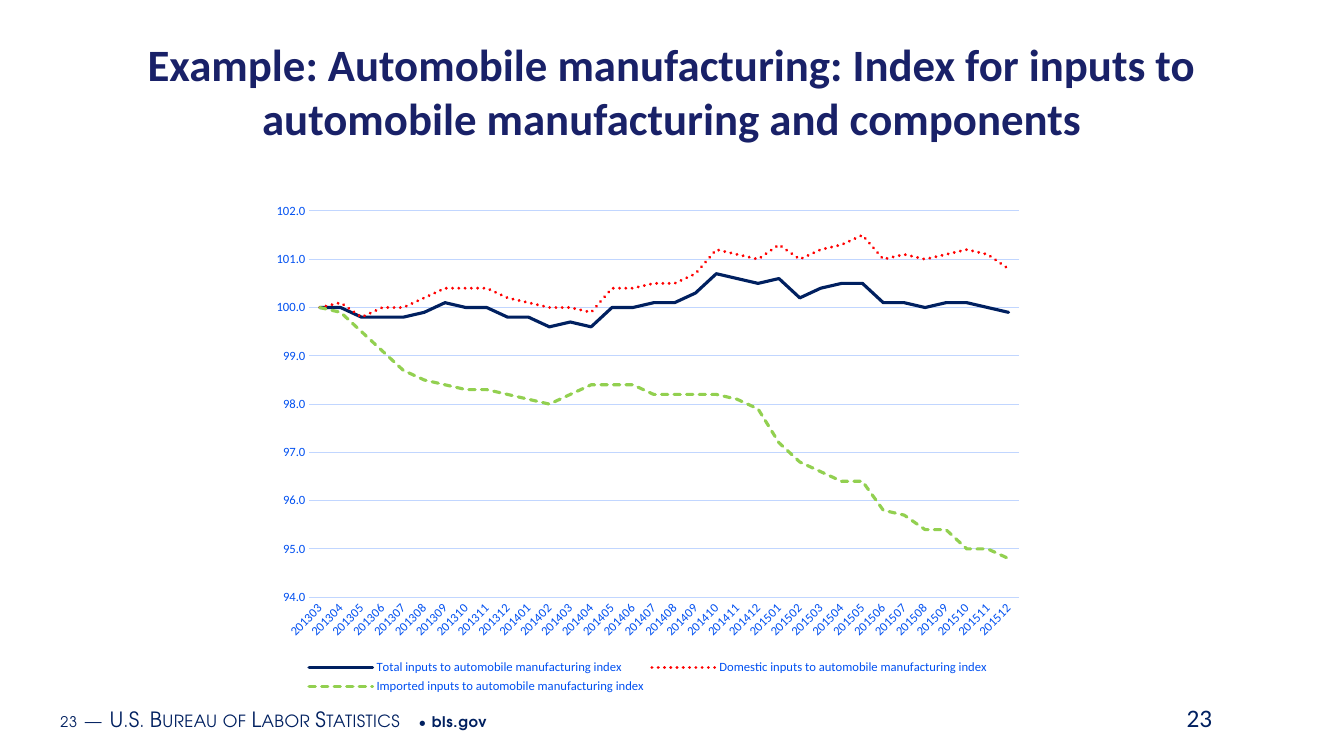
from pptx import Presentation
from pptx.chart.data import CategoryChartData
from pptx.dml.color import RGBColor
from pptx.enum.chart import XL_CHART_TYPE, XL_LEGEND_POSITION, XL_TICK_MARK
from pptx.enum.dml import MSO_LINE
from pptx.enum.text import MSO_ANCHOR, PP_ALIGN
from pptx.util import Pt

PX = 9144  # EMU per px, 100 px to the inch
NAVY = RGBColor(0x00, 0x20, 0x60)
TITLE_BLUE = RGBColor(0x19, 0x21, 0x68)
LABEL_BLUE = RGBColor(0x00, 0x50, 0xF1)
GRID_BLUE = RGBColor(0xC1, 0xD6, 0xFF)
RED = RGBColor(0xFF, 0x00, 0x00)
GREEN = RGBColor(0x92, 0xD0, 0x50)
BODY_FONT = "Calibri"
FOOTER_FONT = "TeX Gyre Adventor"
NO_TICK = XL_TICK_MARK.NONE


def style_font(font, size, color, name=BODY_FONT, bold=False):
    font.size = Pt(size)
    font.color.rgb = color
    font.name = name
    font.bold = bold


def add_box(page, left, top, width, height, anchor):
    box = page.shapes.add_textbox(left * PX, top * PX, width * PX, height * PX)
    box.text_frame.word_wrap = True
    box.text_frame.vertical_anchor = anchor
    return box.text_frame


deck = Presentation()
deck.slide_width, deck.slide_height = 1333 * PX, 750 * PX
page = deck.slides.add_slide(deck.slide_layouts[6])

# Footer: text, size, letter spacing in hundredths of a point, small caps, bold
footer_spans = [
    ("23", 10.5, 50, False, False),
    (" ", 16, 50, False, False),
    ("—", 15, 30, True, False),
    (" ", 16, 50, False, False),
    ("U.S. Bureau of Labor Statistics", 15, 30, True, False),
    (" • ", 10.5, 50, False, False),
    ("bls.gov", 10.5, 50, False, True),
]
footer = add_box(page, 53, 693, 847, 40, MSO_ANCHOR.MIDDLE)
footer.margin_left = footer.margin_right = 7 * PX
footer.margin_top = footer.margin_bottom = 4 * PX
for text, size, spacing, small_caps, bold in footer_spans:
    span = footer.paragraphs[0].add_run()
    span.text = text
    style_font(span.font, size, NAVY, FOOTER_FONT, bold)
    properties = span.font._element
    properties.set("spc", str(spacing))
    if small_caps:
        properties.set("cap", "small")

# Title
title = add_box(page, 54, 30, 1225, 120, MSO_ANCHOR.MIDDLE)
title.text = ("Example: Automobile manufacturing: Index for inputs to "
              "automobile manufacturing and components")
para = title.paragraphs[0]
para.alignment = PP_ALIGN.CENTER
style_font(para.runs[0].font, 32, TITLE_BLUE, bold=True)

# Page number
number = add_box(page, 1167, 692, 100, 40, MSO_ANCHOR.TOP)
number.text = "23"
style_font(number.paragraphs[0].runs[0].font, 18, NAVY)

# Chart data: monthly indexes from March 2013 to December 2015
months = [f"{year}{month:02d}" for year in (2013, 2014, 2015)
          for month in range(3 if year == 2013 else 1, 13)]
indexes = [
    ("Total", NAVY, None,
     [100, 100, 99.8, 99.8, 99.8, 99.9, 100.1, 100, 100, 99.8, 99.8, 99.6,
      99.7, 99.6, 100, 100, 100.1, 100.1, 100.3, 100.7, 100.6, 100.5, 100.6,
      100.2, 100.4, 100.5, 100.5, 100.1, 100.1, 100, 100.1, 100.1, 100, 99.9]),
    ("Domestic", RED, MSO_LINE.ROUND_DOT,
     [100, 100.1, 99.8, 100, 100, 100.2, 100.4, 100.4, 100.4, 100.2, 100.1, 100,
      100, 99.9, 100.4, 100.4, 100.5, 100.5, 100.7, 101.2, 101.1, 101, 101.3,
      101, 101.2, 101.3, 101.5, 101, 101.1, 101, 101.1, 101.2, 101.1, 100.8]),
    ("Imported", GREEN, MSO_LINE.SQUARE_DOT,
     [100, 99.9, 99.5, 99.1, 98.7, 98.5, 98.4, 98.3, 98.3, 98.2, 98.1, 98,
      98.2, 98.4, 98.4, 98.4, 98.2, 98.2, 98.2, 98.2, 98.1, 97.9, 97.2,
      96.8, 96.6, 96.4, 96.4, 95.8, 95.7, 95.4, 95.4, 95, 95, 94.8]),
]
dash_names = {"Domestic": "sysDot", "Imported": "sysDash"}
data = CategoryChartData(number_format="0.0")
data.categories = months
for origin, color, dash, values in indexes:
    data.add_series(f"{origin} inputs to automobile manufacturing index", values)
chart = page.shapes.add_chart(XL_CHART_TYPE.LINE, 259 * PX, 192 * PX,
                              767 * PX, 500 * PX, data).chart
chart.has_title = False
style_font(chart.font, 10, NAVY)

# Series lines
for series, (origin, color, dash, values) in zip(chart.plots[0].series, indexes):
    series.smooth = False
    line = series.format.line
    line.color.rgb = color
    line.width = Pt(2.25)
    if dash:
        line.dash_style = dash
        for preset in series._element.xpath(".//a:prstDash"):
            preset.set("val", dash_names[origin])
    for outline in series._element.xpath("./c:spPr/a:ln"):
        outline.set("cap", "rnd")

# Axes
for axis in (chart.category_axis, chart.value_axis):
    axis.major_tick_mark = axis.minor_tick_mark = NO_TICK
    style_font(axis.tick_labels.font, 9, LABEL_BLUE)
month_axis, index_axis = chart.category_axis, chart.value_axis
month_axis.format.line.color.rgb = GRID_BLUE
month_axis.format.line.width = Pt(0.75)
for body in month_axis._element.xpath("./c:txPr/a:bodyPr"):
    body.set("rot", "-2700000")
index_axis.minimum_scale, index_axis.maximum_scale = 94, 102
index_axis.major_unit = 1
index_axis.format.line.fill.background()
index_axis.tick_labels.number_format = "0.0"
index_axis.tick_labels.number_format_is_linked = False
index_axis.has_major_gridlines = True
index_axis.major_gridlines.format.line.color.rgb = GRID_BLUE
index_axis.major_gridlines.format.line.width = Pt(0.75)

# Legend
chart.has_legend = True
chart.legend.position = XL_LEGEND_POSITION.BOTTOM
chart.legend.include_in_layout = False
style_font(chart.legend.font, 9, LABEL_BLUE)

deck.save("out.pptx")
